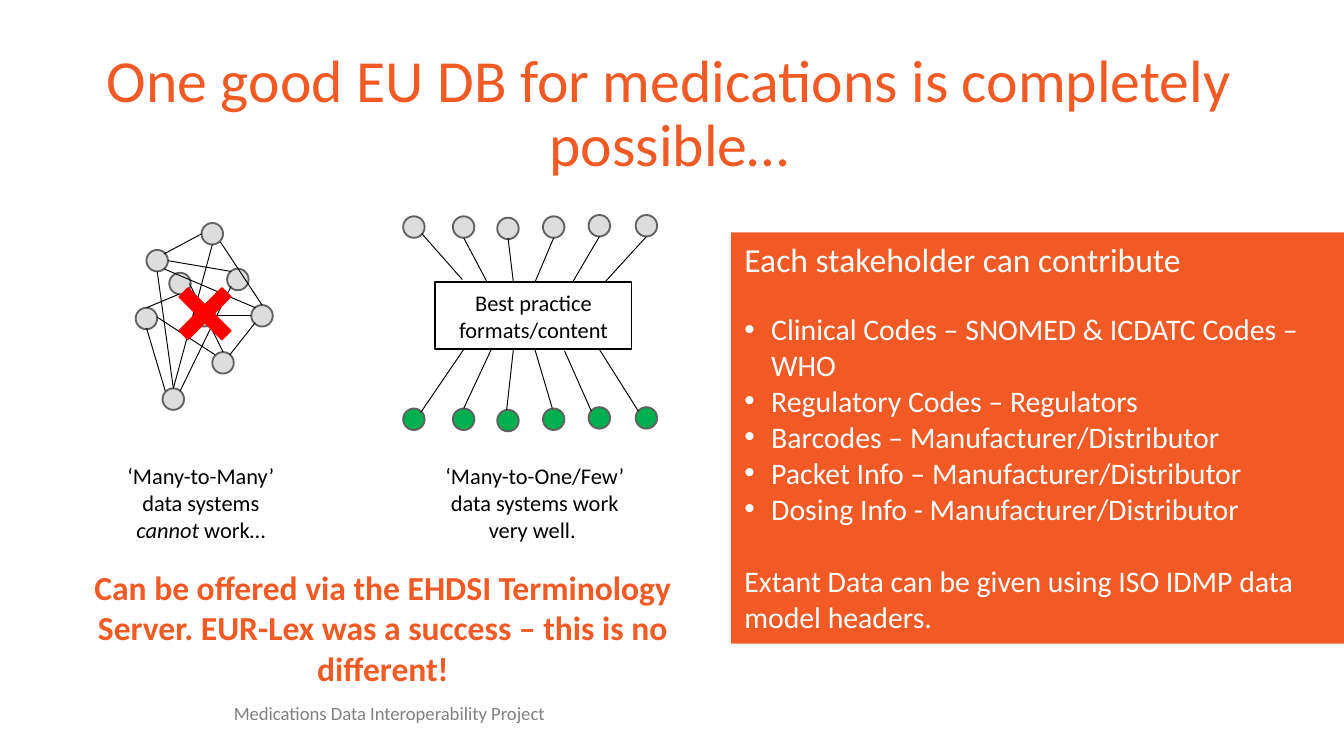
from lxml.etree import SubElement
from pptx import Presentation
from pptx.dml.color import RGBColor
from pptx.enum.shapes import MSO_CONNECTOR, MSO_SHAPE
from pptx.enum.text import MSO_ANCHOR, PP_ALIGN
from pptx.oxml.ns import qn
from pptx.util import Inches, Pt

ORANGE, WHITE, BLACK = "F15A24", "FFFFFF", "000000"
GREY, GREEN, RED = "DDDDDD", "00B050", "FF0000"
NODE_LINE, FOOTER_GREY = "616161", "808080"
NODE_SIZE = 0.16
SLIDE_WIDTH = 10


def rgb(value):
    return RGBColor.from_string(value)


class SlideBuilder:
    font = "Calibri"

    def __init__(self, slide):
        self.slide = slide

    def run(self, paragraph, text, size, color, bold=False, italic=False):
        run = paragraph.add_run()
        run.text = text
        font = run.font
        font.name, font.size = self.font, Pt(size)
        font.bold, font.italic = bold, italic
        font.color.rgb = rgb(color)

    def title(self, text, box):
        title = self.slide.shapes.title
        title.left, title.top, title.width, title.height = map(Inches, box)
        frame = title.text_frame
        frame.word_wrap = True
        frame.vertical_anchor = MSO_ANCHOR.MIDDLE
        paragraph = frame.paragraphs[0]
        paragraph.alignment = PP_ALIGN.CENTER
        paragraph.line_spacing = 0.9
        self.run(paragraph, text, 32, ORANGE)

    def text(self, box, runs, size, color, bold=False):
        """Centred text; runs are (text, italic) pairs."""
        frame = self.slide.shapes.add_textbox(*map(Inches, box)).text_frame
        frame.word_wrap = True
        paragraph = frame.paragraphs[0]
        paragraph.alignment = PP_ALIGN.CENTER
        for words, italic in runs:
            self.run(paragraph, words, size, color, bold, italic)
        return frame

    def shape(self, kind, box, fill, line=None):
        shape = self.slide.shapes.add_shape(kind, *map(Inches, box))
        shape.shadow.inherit = False
        shape.fill.solid()
        shape.fill.fore_color.rgb = rgb(fill)
        if line:
            shape.line.color.rgb = rgb(line)
            shape.line.width = Pt(1)
        else:
            shape.line.fill.background()
        return shape

    def node(self, left, top, fill):
        box = (left, top, NODE_SIZE, NODE_SIZE)
        self.shape(MSO_SHAPE.FLOWCHART_CONNECTOR, box, fill, NODE_LINE)

    def link(self, *ends):
        link = self.slide.shapes.add_connector(
            MSO_CONNECTOR.STRAIGHT, *map(Inches, ends))
        link.line.color.rgb = rgb(BLACK)
        link.line.width = Pt(0.5)
        SubElement(link._element.spPr, qn("a:effectLst"))

    def panel_line(self, paragraph, text, size, bullet=False, before=0):
        paragraph.alignment = PP_ALIGN.LEFT
        paragraph.space_before = Pt(before)
        if bullet:
            properties = paragraph._p.get_or_add_pPr()
            properties.set("marL", str(Inches(0.2)))
            properties.set("indent", str(-Inches(0.2)))
            SubElement(properties, qn("a:buFont"), typeface="Arial")
            SubElement(properties, qn("a:buChar"), char="•")
        self.run(paragraph, text, size, WHITE)


def main():
    deck = Presentation()
    deck.slide_width = Inches(SLIDE_WIDTH)
    deck.slide_height = Inches(SLIDE_WIDTH * 9 / 16)
    builder = SlideBuilder(deck.slides.add_slide(deck.slide_layouts[5]))

    builder.title("One good EU DB for medications is completely possible…",
                  (0.67, 0.54, 8.62, 0.63))

    # Footer
    footer = builder.text((1.74, 5.21, 3.03, 0.18),
                          [("Medications Data Interoperability Project", False)],
                          10, FOOTER_GREY)
    footer.margin_left = footer.margin_right = 0
    footer.margin_top = footer.margin_bottom = 0
    footer.vertical_anchor = MSO_ANCHOR.BOTTOM
    footer.paragraphs[0].alignment = PP_ALIGN.LEFT
    footer.paragraphs[0].line_spacing = 0.9

    # Stakeholder panel
    panel = builder.shape(MSO_SHAPE.RECTANGLE, (5.44, 1.73, 4.56, 3.06), ORANGE)
    frame = panel.text_frame
    frame.word_wrap = True
    frame.vertical_anchor = MSO_ANCHOR.TOP
    builder.panel_line(frame.paragraphs[0], "Each stakeholder can contribute", 18)
    contributions = [
        "Clinical Codes – SNOMED & ICDATC Codes – WHO",
        "Regulatory Codes – Regulators",
        "Barcodes – Manufacturer/Distributor",
        "Packet Info – Manufacturer/Distributor",
        "Dosing Info - Manufacturer/Distributor",
    ]
    for index, contribution in enumerate(contributions):
        builder.panel_line(frame.add_paragraph(), contribution, 16, bullet=True,
                           before=0 if index else 17)
    builder.panel_line(
        frame.add_paragraph(),
        "Extant Data can be given using ISO IDMP data model headers.",
        16, before=19.5)

    # Many-to-many network
    mesh_nodes = [(1.09, 1.86), (1.01, 2.29), (1.5, 1.66), (1.44, 2.27),
                  (1.21, 2.89), (1.69, 2), (1.26, 2.03), (1.58, 2.62),
                  (1.87, 2.27)]
    mesh_links = [
        (1.09, 2.44, 1.23, 2.91), (1.17, 2.36, 1.6, 2.64),
        (1.9, 2.4, 1.71, 2.64), (1.6, 2.35, 1.87, 2.35),
        (1.09, 2.29, 1.33, 2.19), (1.22, 1.89, 1.5, 1.74),
        (1.58, 1.82, 1.29, 2.89), (1.17, 2.02, 1.29, 2.89),
        (1.25, 1.94, 1.72, 2.02), (1.22, 2, 1.9, 2.29),
        (1.72, 2.13, 1.34, 2.91), (1.41, 2.11, 1.66, 2.62),
        (1.64, 1.8, 1.95, 2.27)]
    for left, top in mesh_nodes:
        builder.node(left, top, GREY)
    for ends in mesh_links:
        builder.link(*ends)
    cross = builder.shape(MSO_SHAPE.MATH_MULTIPLY, (1.22, 2.03, 0.61, 0.61),
                          RED, RED)
    cross.adjustments[0] = 0.15
    builder.text((0.81, 3.39, 1.37, 0.71),
                 [("‘Many-to-Many’ data systems ", False), ("cannot ", True),
                  ("work…", False)], 12, BLACK)

    # Many-to-one network: sources above the hub, users below
    sources = [(3, 1.61), (3.37, 1.61), (3.7, 1.62),
               (4.04, 1.61), (4.38, 1.6), (4.73, 1.6)]
    for left, top in sources:
        builder.node(left, top, GREY)
        builder.node(left, top + 1.43, GREEN)
    hub = builder.shape(MSO_SHAPE.RECTANGLE, (3.24, 2.1, 1.46, 0.5),
                        WHITE, BLACK)
    hub.text_frame.word_wrap = True
    hub_label = hub.text_frame.paragraphs[0]
    hub_label.alignment = PP_ALIGN.CENTER
    builder.run(hub_label, "Best practice formats/content", 12, BLACK)
    hub_links = [
        (3.14, 1.74, 3.44, 2.08), (3.45, 1.77, 3.62, 2.09),
        (3.78, 1.77, 3.82, 2.1), (4.12, 1.77, 3.98, 2.1),
        (4.46, 1.76, 4.26, 2.1), (4.81, 1.76, 4.5, 2.1),
        (3.13, 3.07, 3.45, 2.6), (3.45, 3.04, 3.66, 2.59),
        (3.77, 3.05, 3.82, 2.6), (4.11, 3.04, 3.98, 2.6),
        (4.4, 3.06, 4.2, 2.61), (4.75, 3.06, 4.46, 2.6)]
    for ends in hub_links:
        builder.link(*ends)
    builder.text((3.1, 3.39, 1.76, 0.71),
                 [("‘Many-to-One/Few’ data systems work very well. ", False)],
                 12, BLACK)

    # Conclusion
    builder.text((0.37, 4.17, 4.96, 1.01),
                 [("Can be offered via the EHDSI Terminology Server. EUR-Lex "
                   "was a success – this is no different!", False)],
                 18, ORANGE, bold=True)

    deck.save("out.pptx")


if __name__ == "__main__":
    main()
